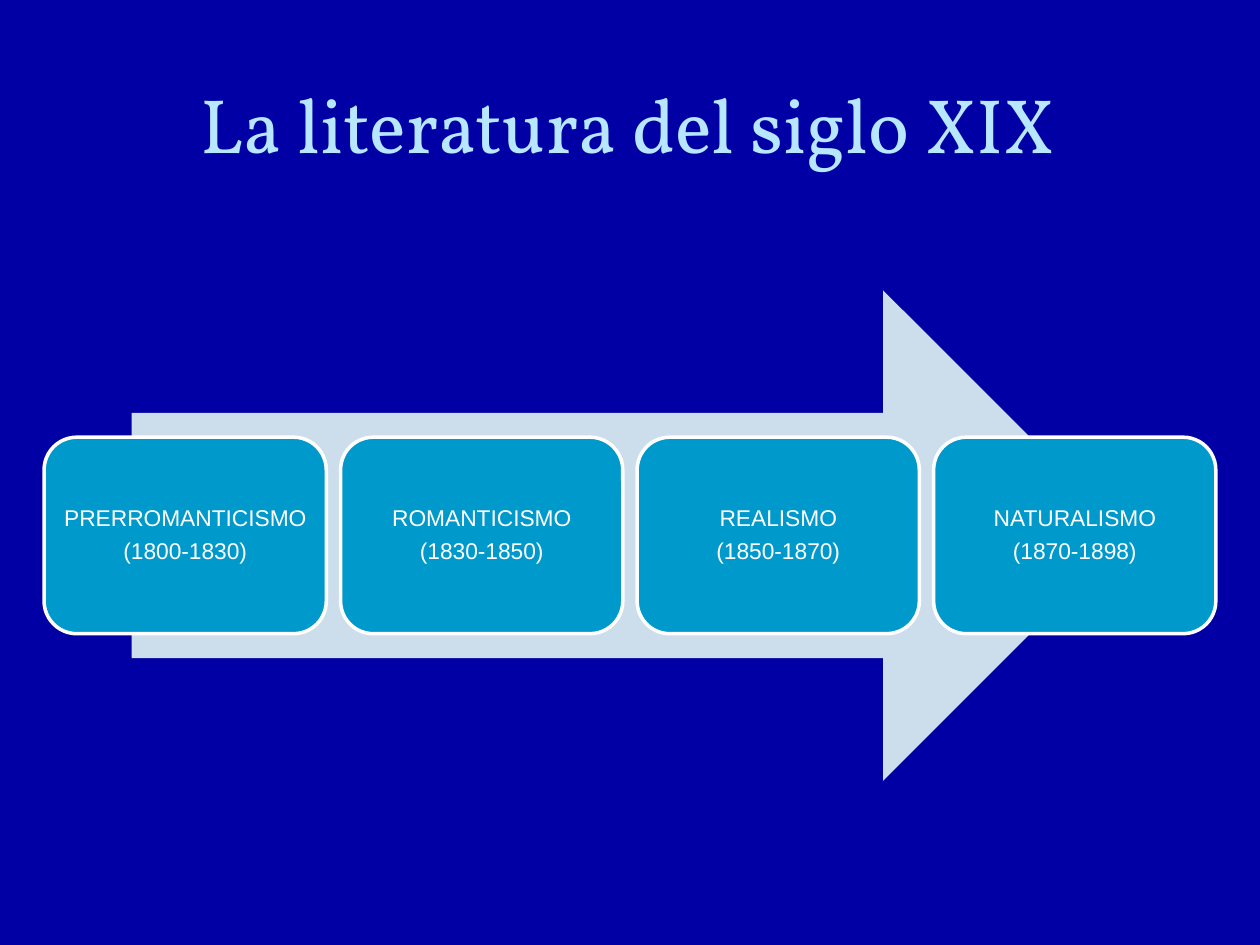
from pptx import Presentation
from pptx.dml.color import RGBColor
from pptx.enum.shapes import MSO_SHAPE
from pptx.enum.text import MSO_ANCHOR, PP_ALIGN
from pptx.util import Inches, Pt

ARROW, CARD = MSO_SHAPE.RIGHT_ARROW, MSO_SHAPE.ROUNDED_RECTANGLE
MIDDLE, CENTER = MSO_ANCHOR.MIDDLE, PP_ALIGN.CENTER

THEME = {
    "background": RGBColor(0x00, 0x00, 0xA4),
    "arrow": RGBColor(0xCC, 0xDE, 0xEC),
    "card": RGBColor(0x00, 0x99, 0xCC),
    "outline": RGBColor(0xFF, 0xFF, 0xFF),
    "title": {"name": "Vollkorn", "size": Pt(44), "color": RGBColor(0xB7, 0xE7, 0xFF)},
    "label": {"name": "Arial", "size": Pt(13), "color": RGBColor(0xFF, 0xFF, 0xFF)},
}
PERIODS = [
    ("PRERROMANTICISMO", "(1800-1830)"),
    ("ROMANTICISMO", "(1830-1850)"),
    ("REALISMO", "(1850-1870)"),
    ("NATURALISMO", "(1870-1898)"),
]


def write(s, lines, style, inset, **spacing):
    """Fill a shape with centred lines; spacing is applied to each paragraph."""
    tf = s.text_frame
    tf.word_wrap = True
    tf.vertical_anchor = MIDDLE
    for side in ("left", "top", "right", "bottom"):
        setattr(tf, f"margin_{side}", inset)
    for i, line in enumerate(lines):
        p = tf.paragraphs[0] if i == 0 else tf.add_paragraph()
        p.alignment = CENTER
        for name, value in spacing.items():
            setattr(p, name, value)
        if i < len(lines) - 1:
            p.space_after = Pt(5)
        r = p.add_run()
        r.text = line
        r.font.name, r.font.size = style["name"], style["size"]
        r.font.color.rgb = style["color"]


def add_solid(kind, left, top, width, height, fill):
    s = slide.shapes.add_shape(kind, int(left), int(top), int(width), int(height))
    s.shadow.inherit = False
    s.fill.solid()
    s.fill.fore_color.rgb = fill
    s.line.fill.background()
    return s


prs = Presentation()
prs.slide_width, prs.slide_height = Inches(10), Inches(7.5)
W, H = prs.slide_width, prs.slide_height
slide = prs.slides.add_slide(prs.slide_layouts[6])
slide.background.fill.solid()
slide.background.fill.fore_color.rgb = THEME["background"]

# Title
title = slide.shapes.add_textbox(int(0.033 * W), int(H / 30), int(0.931 * W), int(0.193 * H))
write(title, ["La literatura del siglo XIX"], THEME["title"], Inches(0.05))

# Arrow and cards share one centre line
axis = 0.5667 * H
arrow_w, arrow_h = 0.791 * W, 0.519 * H
add_solid(ARROW, (W - arrow_w) / 2, axis - arrow_h / 2, arrow_w, arrow_h, THEME["arrow"])

# Four equal cards across the diagram
left, span, gap = 0.035 * W, 0.93 * W, 0.0113 * W
card_w = (span - gap * (len(PERIODS) - 1)) / len(PERIODS)
card_h = 0.208 * H
for i, period in enumerate(PERIODS):
    card = add_solid(CARD, left + i * (card_w + gap), axis - card_h / 2, card_w, card_h, THEME["card"])
    card.line.color.rgb = THEME["outline"]
    card.line.width = Pt(2)
    write(card, period, THEME["label"], Inches(0.02), line_spacing=0.9)

prs.save("out.pptx")
